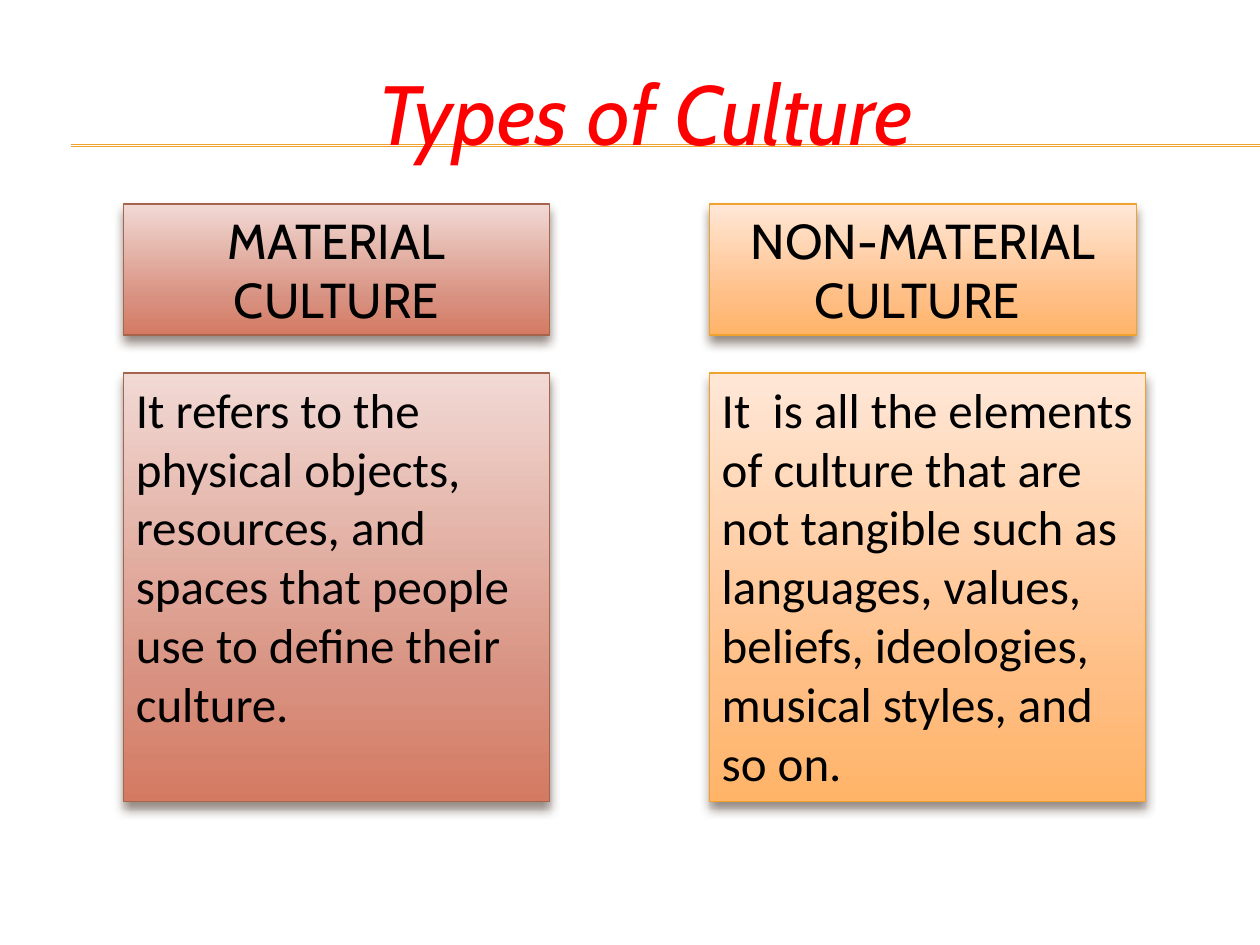
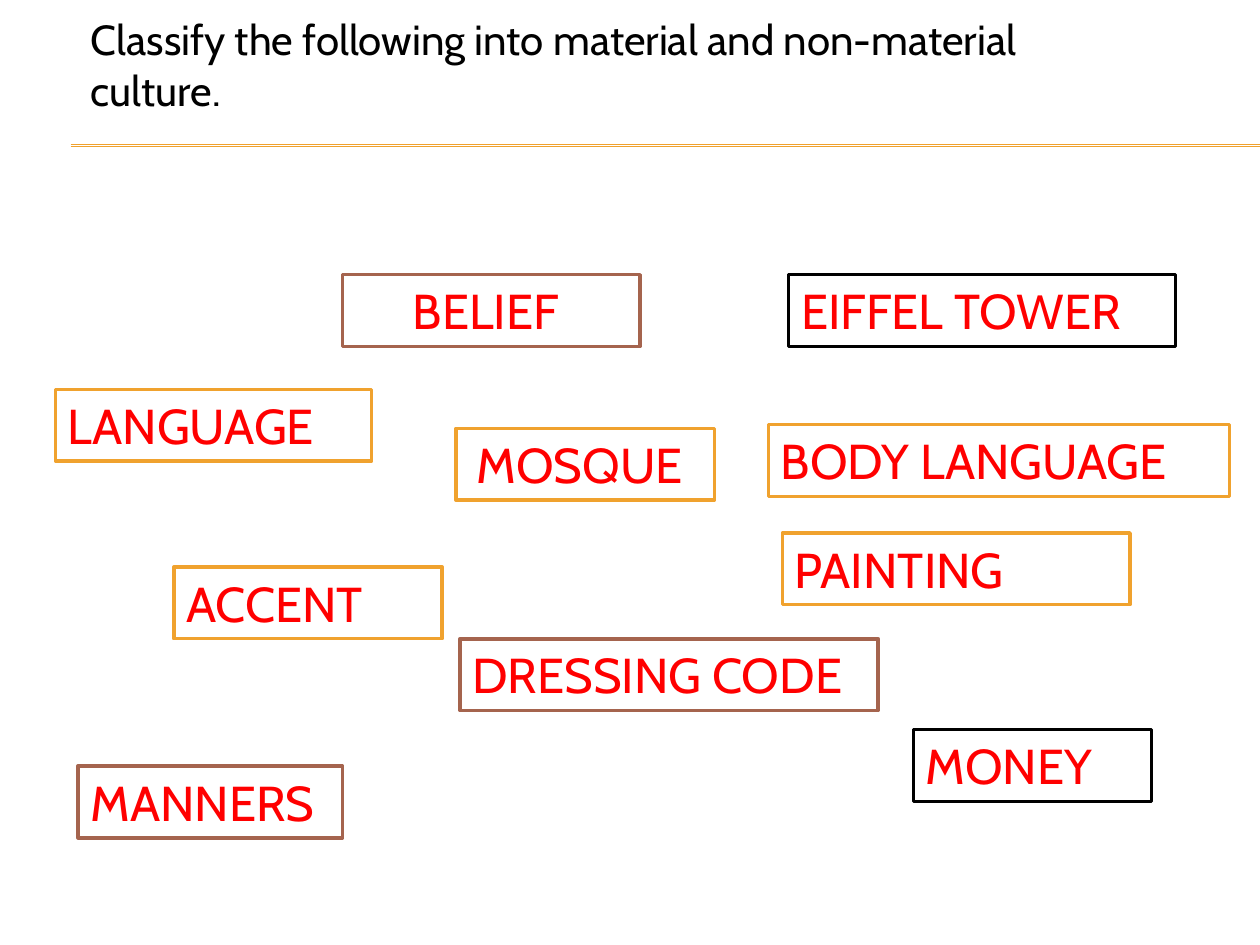
from copy import deepcopy
from dataclasses import dataclass
from lxml.etree import SubElement
from pptx import Presentation
from pptx.dml.color import RGBColor
from pptx.enum.shapes import MSO_CONNECTOR, MSO_SHAPE
from pptx.enum.text import MSO_ANCHOR, MSO_AUTO_SIZE, PP_ALIGN
from pptx.oxml.ns import qn
from pptx.util import Inches, Pt


@dataclass(frozen=True)
class Theme:
    head: str = "Cabin"
    body: str = "Calibri"
    black: str = "000000"
    red: str = "FF0000"
    white: str = "FFFFFF"
    gold: str = "F0A22E"
    brown: str = "A5644E"
    shade: str = "4E3B30"
    rust: tuple = ("F1D9D4", "D89180", "D47A62")
    peach: tuple = ("FFE7D7", "FFBE84", "FFB468")
    stops: tuple = (0, 0.72, 1)
    huge: int = 48
    large: int = 28
    small: int = 24


def write(frame, text, font, size, color, center=False, italic=False):
    frame.word_wrap = True
    frame.auto_size = MSO_AUTO_SIZE.NONE
    frame.vertical_anchor = MSO_ANCHOR.TOP
    para = frame.paragraphs[0]
    para.alignment = PP_ALIGN.CENTER if center else PP_ALIGN.LEFT
    run = para.add_run()
    run.text = text
    run.font.name = font
    run.font.size = Pt(size)
    run.font.italic = italic
    run.font.color.rgb = RGBColor.from_string(color)


class Deck:
    def __init__(self, theme):
        self.theme = theme
        self.file = Presentation()
        self.file.slide_width = Inches(10)
        self.file.slide_height = Inches(7.5)
        self.slide = None

    def place(self, x, y):
        return (round(self.file.slide_width * x / 100),
                round(self.file.slide_height * y / 100))

    def start(self, text, x, y, w, h, **form):
        self.slide = self.file.slides.add_slide(self.file.slide_layouts[5])
        for level in (15.33, 15.47):
            self.rule(5.6, level)
        title = self.slide.shapes.title
        title.left, title.top = self.place(x, y)
        title.width, title.height = self.place(w, h)
        write(title.text_frame, text, self.theme.head, **form)

    def rule(self, x, y):
        shapes = self.slide.shapes
        line = shapes.add_connector(MSO_CONNECTOR.STRAIGHT, *self.place(x, y), *self.place(100, y))
        line.line.color.rgb = RGBColor.from_string(self.theme.gold)
        line.line.width = Pt(0.75)
        SubElement(line._element.spPr, qn("a:effectLst"))
        shapes._spTree.insert(2, line._element)

    def box(self, text, x, y, w, h, edge, width, **form):
        shape = self.slide.shapes.add_shape(
            MSO_SHAPE.RECTANGLE, *self.place(x, y), *self.place(w, h))
        shape.shadow.inherit = False
        shape.fill.solid()
        shape.fill.fore_color.rgb = RGBColor.from_string(self.theme.white)
        shape.line.color.rgb = RGBColor.from_string(edge)
        shape.line.width = Pt(width)
        write(shape.text_frame, text, size=self.theme.large, **form)
        return shape

    def panel(self, text, x, y, w, h, edge, tones, **form):
        shape = self.box(text, x, y, w, h, edge, 0.79, color=self.theme.black, **form)
        self.blend(shape, tones)
        self.shade(shape)

    def blend(self, shape, tones):
        shape.fill.gradient()
        shape.fill.gradient_angle = 270
        stops = shape._element.spPr.find(qn("a:gradFill")).find(qn("a:gsLst"))
        stops.append(deepcopy(stops[-1]))
        for stop, tone, share in zip(shape.fill.gradient_stops, tones, self.theme.stops):
            stop.color.rgb = RGBColor.from_string(tone)
            stop.position = share

    def shade(self, shape):
        effects = shape._element.spPr.find(qn("a:effectLst"))
        shadow = SubElement(effects, qn("a:outerShdw"), blurRad=str(Pt(6)),
                            dist=str(Pt(4)), dir="5400000", rotWithShape="0")
        color = SubElement(shadow, qn("a:srgbClr"), val=self.theme.shade)
        SubElement(color, qn("a:alpha"), val="60000")

    def label(self, text, x, y, w, edge, center=False):
        self.box(text, x, y, w, 7.6, edge, 2, font=self.theme.head,
                 color=self.theme.red, center=center)


def types(deck):
    look = deck.theme
    deck.start("Types of Culture ", 24, 5.87, 55.9, 12.13, size=look.huge,
               color=look.red, center=True, italic=True)
    sides = (
        (9.8, 33.8, 33.8, look.brown, look.rust, "MATERIAL CULTURE",
         "It refers to the physical objects, resources, and spaces that people "
         "use to define their culture."),
        (56.3, 33.9, 34.6, look.gold, look.peach, "NON-MATERIAL CULTURE ",
         "It  is all the elements of culture that are not tangible such as "
         "languages, values, beliefs, ideologies, musical styles, and so on."),
    )
    for x, top, low, edge, tones, name, text in sides:
        deck.panel(name, x, 21.6, top, 13.87, edge, tones, font=look.head, center=True)
        deck.panel(text, x, 39.47, low, 45.33, edge, tones, font=look.body)


def sort(deck):
    look = deck.theme
    deck.start("Classify the following into material and non-material culture.",
               6.2, 0.8, 83.5, 12.13, size=look.small, color=look.black)
    labels = (
        ("MOSQUE ", 36.2, 45.33, 20.5, look.gold, True),
        ("LANGUAGE", 4.4, 41.2, 25.1, look.gold),
        ("BELIEF ", 27.2, 29.07, 23.6, look.brown, True),
        ("ACCENT", 13.8, 60, 21.3, look.gold),
        ("BODY LANGUAGE", 61, 44.93, 36.6, look.gold),
        ("MONEY", 72.5, 77.2, 18.9, look.black),
        ("EIFFEL TOWER", 62.6, 29.07, 30.7, look.black),
        ("PAINTING", 62.1, 56.4, 27.6, look.gold),
        ("MANNERS", 6.2, 81.07, 21, look.brown),
        ("DRESSING CODE", 36.5, 67.6, 33.2, look.brown),
    )
    for item in labels:
        deck.label(*item)


def main():
    deck = Deck(Theme())
    types(deck)
    sort(deck)
    deck.file.save("out.pptx")


if __name__ == "__main__":
    main()
